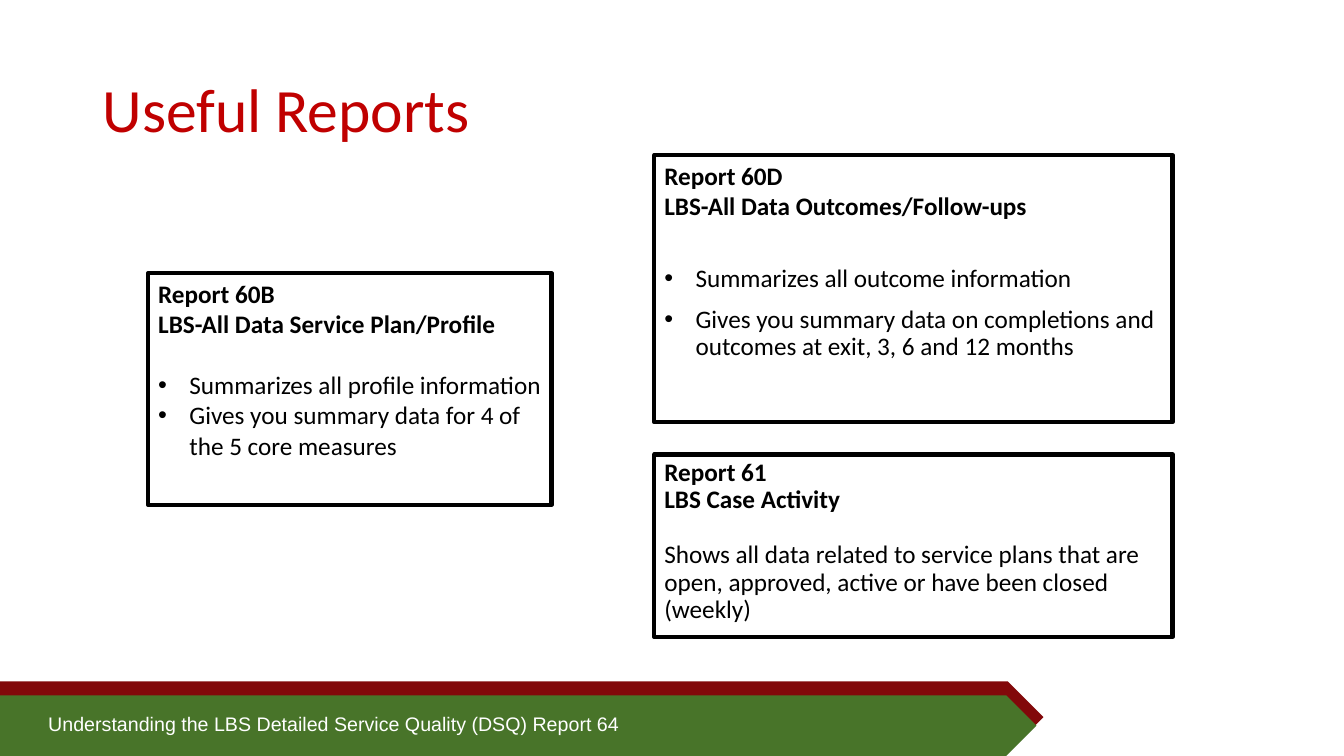
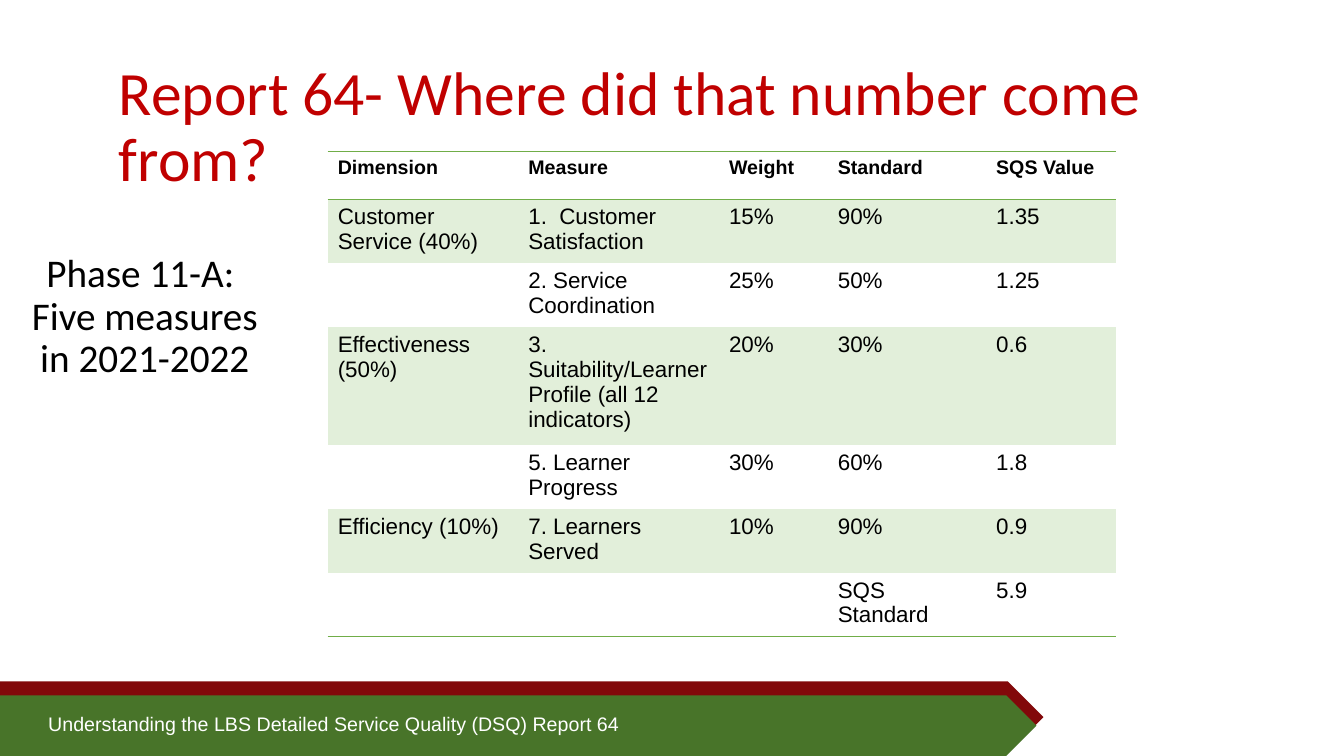
from lxml import etree
from pptx import Presentation
from pptx import util as u
from pptx.dml.color import RGBColor
from pptx.enum import shapes, text
from pptx.oxml import ns

WIDTH, HEIGHT = u.Inches(13.33), u.Inches(7.5)
COLOURS = {
    "title": "C00000", "ink": "000000", "paper": "FFFFFF",
    "red band": "82080A", "green band": "487429",
    "rule": "70AD47", "stripe": "E2EFDA",
}
HEADING_FONT, BODY_FONT = "Calibri", "Arial"
FOOTER = "Understanding the LBS Detailed Service Quality (DSQ) Report 64"
PLAIN_TABLE = "{2D5ABB26-0587-4C30-8999-92F81FD0307C}"


def colour(name):
    return RGBColor.from_string(COLOURS[name])


def across(share):
    """Length for a percentage of the slide's width."""
    return round(WIDTH * share / 100)


def down(share):
    """Length for a percentage of the slide's height."""
    return round(HEIGHT * share / 100)


def area(left, top, width, height):
    return across(left), down(top), across(width), down(height)


def add_child(parent, tag, **attributes):
    return etree.SubElement(parent, ns.qn(tag), attributes)


# Text
def add_span(para, words, size, font=HEADING_FONT, ink="ink", bold=False):
    span = para.add_run()
    span.text = words
    span.font.size = u.Pt(size)
    span.font.name = font
    span.font.bold = bold
    span.font.color.rgb = colour(ink)


def add_bullet(para):
    indent = u.Inches(0.31)
    properties = para._p.get_or_add_pPr()
    properties.set("marL", str(indent))
    properties.set("indent", str(-indent))
    add_child(properties, "a:buFont", typeface=BODY_FONT)
    add_child(properties, "a:buChar", char="•")


def add_text(page, place, words, size, spacing=1.0, align=text.PP_ALIGN.LEFT,
             anchor=text.MSO_ANCHOR.TOP, **style):
    box = page.shapes.add_textbox(*area(*place))
    frame = box.text_frame
    frame.word_wrap = True
    frame.vertical_anchor = anchor
    para = frame.paragraphs[0]
    para.alignment = align
    para.line_spacing = spacing
    add_span(para, words, size, **style)


def add_title(page, left, top, words):
    add_text(page, (left, top, 86.27, 19.33), words, 44, spacing=0.9,
             anchor=text.MSO_ANCHOR.MIDDLE, ink="title")


# Footer shared by all pages
def add_footer(page):
    bands = (("red band", (0, 90.13, 77.64, 9.47)),
             ("green band", (0, 92, 77.12, 8)))
    for name, place in bands:
        band = page.shapes.add_shape(shapes.MSO_SHAPE.PENTAGON, *area(*place))
        band.shadow.inherit = False
        band.fill.solid()
        band.fill.fore_color.rgb = colour(name)
        band.line.fill.background()
    add_text(page, (2.85, 93.47, 69.54, 4.53), FOOTER, 14,
             font=BODY_FONT, ink="paper")


# Outlined report card: bold headings, then body paragraphs
def add_card(page, place, headings, body, gap, bullets=True,
             heading_spacing=1.0, body_spacing=1.0, between=0):
    card = page.shapes.add_shape(shapes.MSO_SHAPE.RECTANGLE, *area(*place))
    card.shadow.inherit = False
    card.fill.background()
    card.line.color.rgb = colour("ink")
    card.line.width = u.Pt(3)
    add_child(card._element.spPr.find(ns.qn("a:ln")), "a:round")
    frame = card.text_frame
    frame.word_wrap = True
    frame.vertical_anchor = text.MSO_ANCHOR.TOP
    for number, words in enumerate(headings + body):
        para = frame.paragraphs[0] if number == 0 else frame.add_paragraph()
        para.alignment = text.PP_ALIGN.LEFT
        is_heading = number < len(headings)
        para.line_spacing = heading_spacing if is_heading else body_spacing
        if not is_heading:
            first = number == len(headings)
            para.space_before = u.Pt(gap if first else between)
            if bullets:
                add_bullet(para)
        add_span(para, words, 18, bold=is_heading)


# Table
def add_rule(cell, side):
    properties = cell._tc.get_or_add_tcPr()
    line = etree.Element(ns.qn(side), w=str(u.Pt(1)))
    fill = add_child(line, "a:solidFill")
    add_child(fill, "a:srgbClr", val=COLOURS["rule"])
    borders = properties.findall(ns.qn("a:lnT"))
    properties.insert(len(borders), line)


def add_measures(page, left, top, columns, heights, rows):
    place = area(left, top, sum(columns), sum(heights))
    frame = page.shapes.add_table(len(rows), len(columns), *place)
    table = frame.table
    table.first_row = table.horz_banding = False
    table._tbl.tblPr.find(ns.qn("a:tableStyleId")).text = PLAIN_TABLE
    for column, share in zip(table.columns, columns):
        column.width = across(share)
    for row, share in zip(table.rows, heights):
        row.height = down(share)
    for number, row in enumerate(rows):
        header, last = number == 0, number == len(rows) - 1
        for cell, words in zip(table.rows[number].cells, row):
            if number % 2:
                cell.fill.solid()
                cell.fill.fore_color.rgb = colour("stripe")
            else:
                cell.fill.background()
            if header:
                add_rule(cell, "a:lnT")
            if header or last:
                add_rule(cell, "a:lnB")
            if words:
                add_span(cell.text_frame.paragraphs[0], words,
                         14 if header else 16, font=BODY_FONT, bold=header)


# Pages
def build_reports(page):
    add_title(page, 6.9, 5.2, "Useful Reports")
    add_card(page, (11.03, 36.13, 30, 30.67),
             ["Report 60B", "LBS-All Data Service Plan/Profile"],
             ["Summarizes all profile information",
              "Gives you summary data for 4 of the 5 core measures"], gap=22)
    right, wide = 48.69, 38.56
    add_card(page, (right, 20.53, wide, 35.33),
             ["Report 60D", "LBS-All Data Outcomes/Follow-ups"],
             ["Summarizes all outcome information",
              "Gives you summary data on completions and outcomes at exit, "
              "3, 6 and 12 months"],
             gap=32, body_spacing=0.9, between=10)
    add_card(page, (right, 60.13, wide, 24.13),
             ["Report 61", "LBS Case Activity"],
             ["Shows all data related to service plans that are open, "
              "approved, active or have been closed (weekly)"],
             gap=20, bullets=False, heading_spacing=0.9, body_spacing=0.9)


def build_measures(page):
    add_title(page, 8.1, 7.33, "Report 64- Where did that number come from?")
    rows = (
        ("Dimension", "Measure", "Weight", "Standard", "SQS Value"),
        ("Customer Service (40%)", "1.  Customer Satisfaction",
         "15%", "90%", "1.35"),
        ("", "2. Service Coordination", "25%", "50%", "1.25"),
        ("Effectiveness (50%)",
         "3. Suitability/Learner Profile (all 12 indicators)",
         "20%", "30%", "0.6"),
        ("", "5. Learner Progress", "30%", "60%", "1.8"),
        ("Efficiency (10%)", "7. Learners Served", "10%", "90%", "0.9"),
        ("", "", "", "SQS Standard", "5.9"),
    )
    add_measures(page, 24.38, 20, (14.18, 14.93, 8.1, 11.78, 9.68),
                 (6.4, 8.45, 8.45, 15.6, 8.45, 8.45, 8.45), rows)
    add_text(page, (1.43, 32.93, 18.68, 40.4),
             "Phase 11-A:  Five measures in 2021-2022", 28, spacing=0.9,
             align=text.PP_ALIGN.CENTER)


def main():
    deck = Presentation()
    deck.slide_width, deck.slide_height = WIDTH, HEIGHT
    blank = deck.slide_layouts[6]
    for build in (build_reports, build_measures):
        page = deck.slides.add_slide(blank)
        add_footer(page)
        build(page)
    deck.save("out.pptx")


if __name__ == "__main__":
    main()
